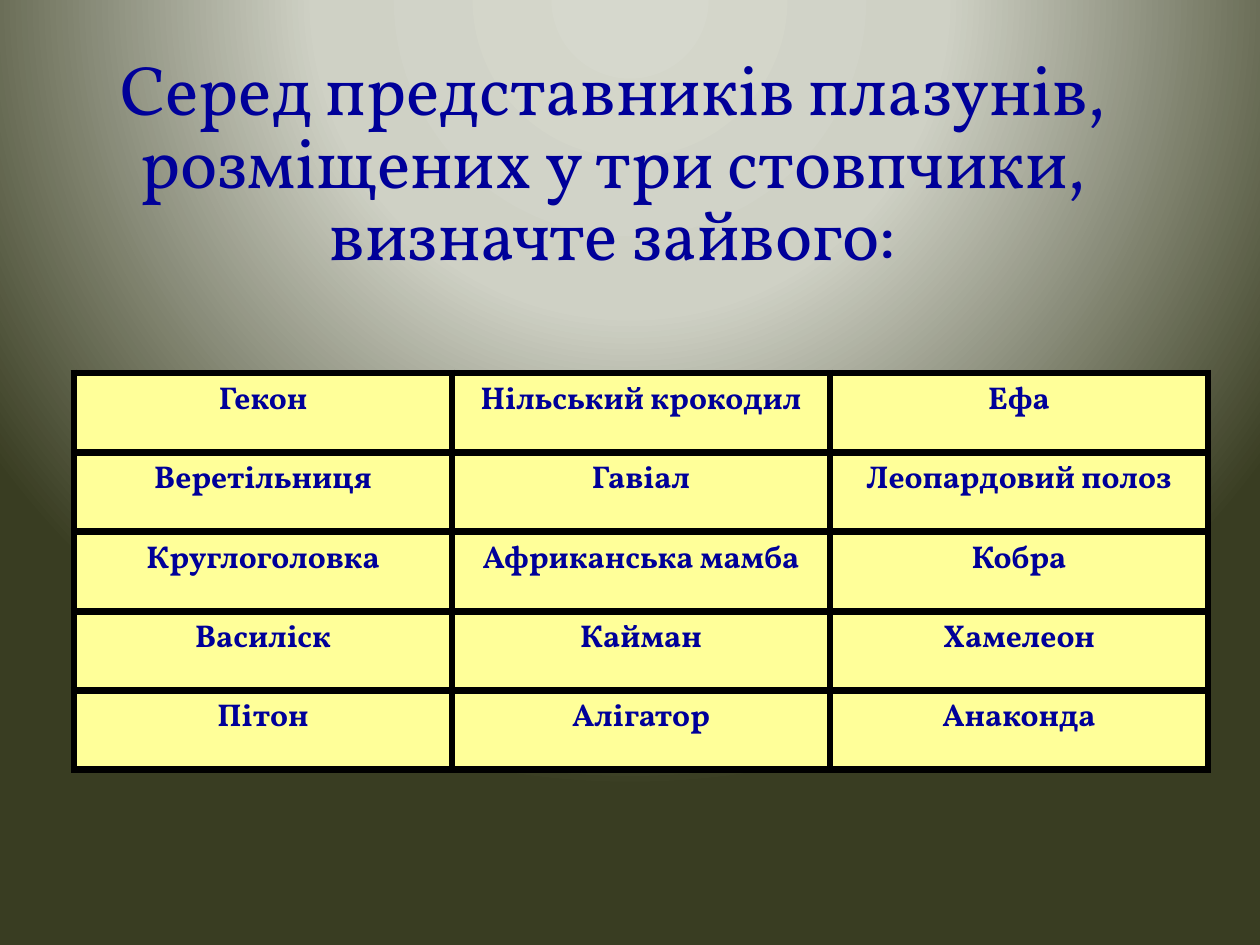
import lxml.etree
import pptx
import pptx.dml.color
import pptx.enum.text
import pptx.oxml
import pptx.oxml.ns
import pptx.util

EMU_PER_PX = 914400 / 126
FONT = "Vollkorn"
COLORS = {
    "text": "000099",
    "cell": "FFFF99",
    "border": "000000",
    "glow": "D6D8CD",
    "haze": "CFD1C5",
    "edge": "393D22",
}
REPTILES = [
    ["Гекон", "Нільський крокодил", "Ефа"],
    ["Веретільниця", "Гавіал", "Леопардовий полоз"],
    ["Круглоголовка", "Африканська мамба", "Кобра"],
    ["Василіск", "Кайман", "Хамелеон"],
    ["Пітон", "Алігатор", "Анаконда"],
]


def px(length):
    return pptx.util.Emu(round(length * EMU_PER_PX))


def rgb(name):
    return pptx.dml.color.RGBColor.from_string(COLORS[name])


def write_text(frame, text, size, bold=False, spacing=None):
    paragraph = frame.paragraphs[0]
    paragraph.alignment = pptx.enum.text.PP_ALIGN.CENTER
    paragraph.line_spacing = spacing
    run = paragraph.add_run()
    run.text = text
    run.font.name = FONT
    run.font.size = pptx.util.Pt(size)
    run.font.bold = bold
    run.font.color.rgb = rgb("text")


def paint_background(slide):
    slide.background.fill.gradient()
    gradient = slide.element.find(".//" + pptx.oxml.ns.qn("a:gradFill"))
    stops = "".join(
        f'<a:gs pos="{percent * 1000}"><a:srgbClr val="{COLORS[name]}"/></a:gs>'
        for percent, name in [(0, "glow"), (40, "haze"), (100, "edge")]
    )
    radial = pptx.oxml.parse_xml(
        f'<a:gradFill {pptx.oxml.ns.nsdecls("a")} rotWithShape="1">'
        f'<a:gsLst>{stops}</a:gsLst><a:path path="circle">'
        '<a:fillToRect l="50000" t="-80000" r="50000" b="180000"/>'
        "</a:path></a:gradFill>"
    )
    gradient.getparent().replace(gradient, radial)


def add_title(slide, text):
    title = slide.shapes.add_textbox(px(29), px(38), px(1168), px(257))
    frame = title.text_frame
    frame.word_wrap = True
    frame.vertical_anchor = pptx.enum.text.MSO_ANCHOR.MIDDLE
    write_text(frame, text, size=40, spacing=0.86)


def set_borders(cell, width):
    properties = cell._tc.get_or_add_tcPr()
    for index, side in enumerate(["lnL", "lnR", "lnT", "lnB"]):
        border = pptx.oxml.parse_xml(
            f'<a:{side} {pptx.oxml.ns.nsdecls("a")} w="{pptx.util.Pt(width)}">'
            f'<a:solidFill><a:srgbClr val="{COLORS["border"]}"/></a:solidFill>'
            f"</a:{side}>"
        )
        properties.insert(index, border)


def add_reptile_table(slide, names):
    table = slide.shapes.add_table(
        len(names), len(names[0]), px(74), px(373), px(1134), px(397)
    ).table
    for row, row_names in enumerate(names):
        for column, name in enumerate(row_names):
            cell = table.cell(row, column)
            cell.fill.solid()
            cell.fill.fore_color.rgb = rgb("cell")
            set_borders(cell, width=4.5)
            write_text(cell.text_frame, name, size=18, bold=True)


def main():
    deck = pptx.Presentation()
    deck.slide_width, deck.slide_height = px(1260), px(945)
    slide = deck.slides.add_slide(deck.slide_layouts[6])
    paint_background(slide)
    add_title(
        slide,
        "Серед представників плазунів, розміщених у три стовпчики, визначте зайвого:",
    )
    add_reptile_table(slide, REPTILES)
    deck.save("out.pptx")


if __name__ == "__main__":
    main()
